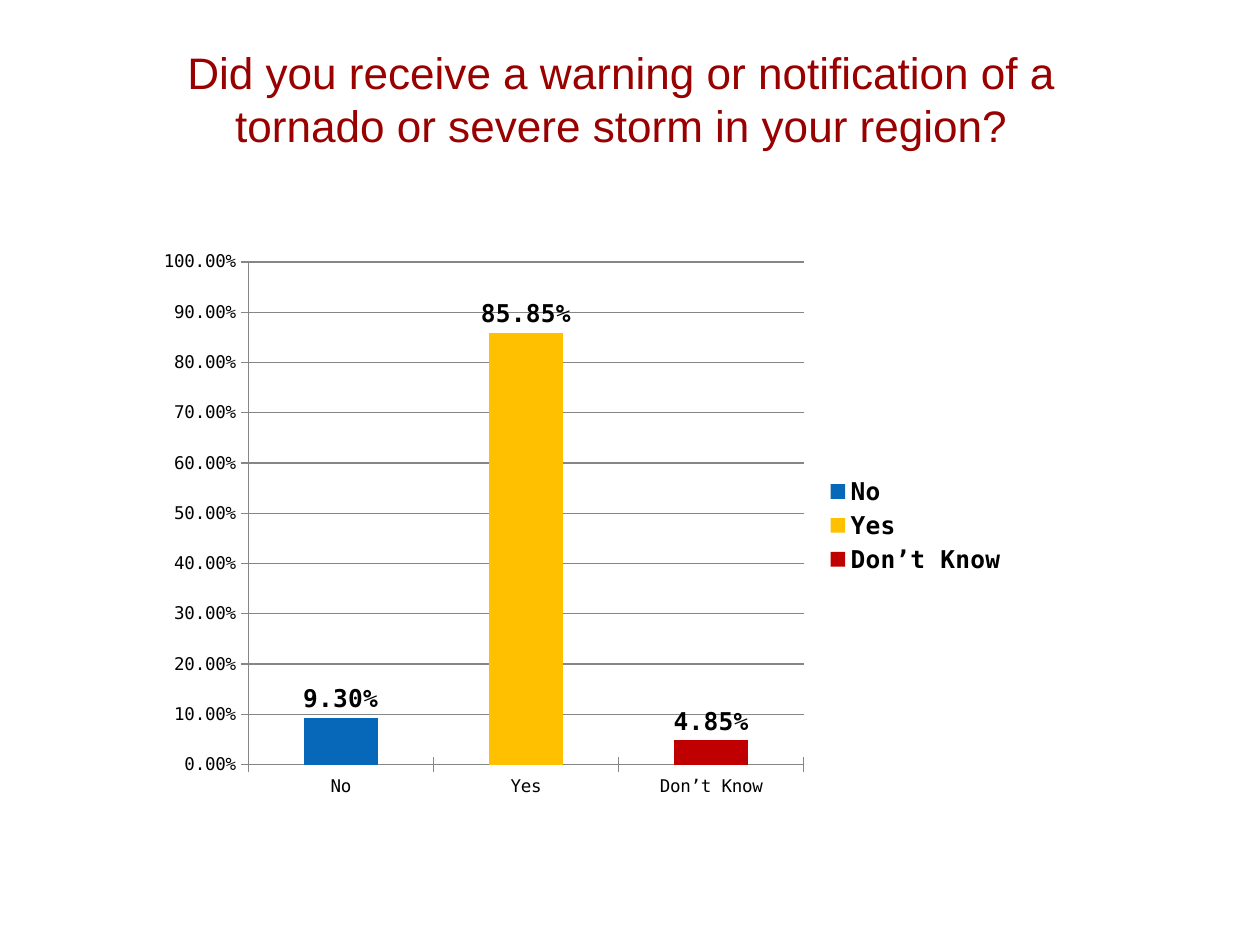
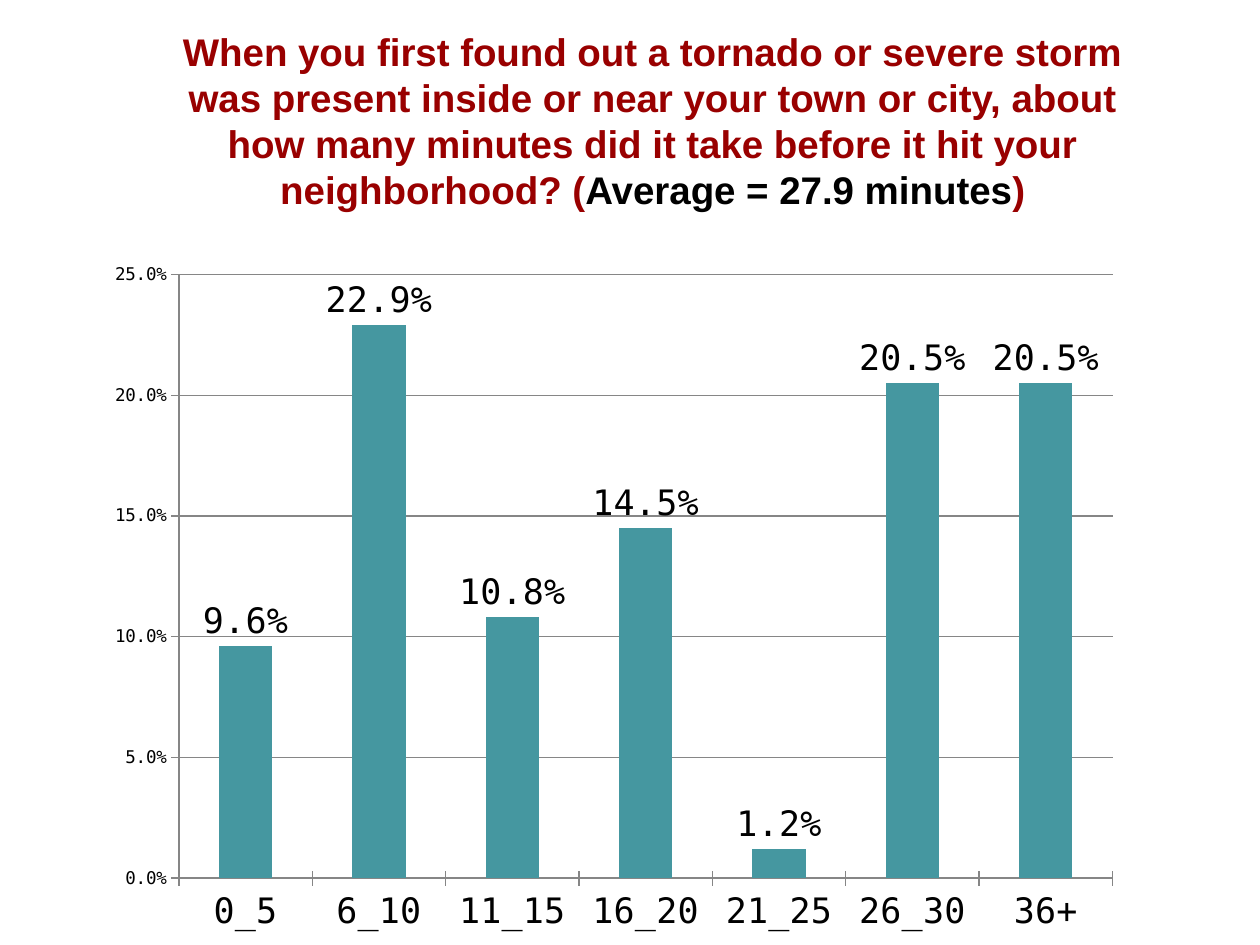
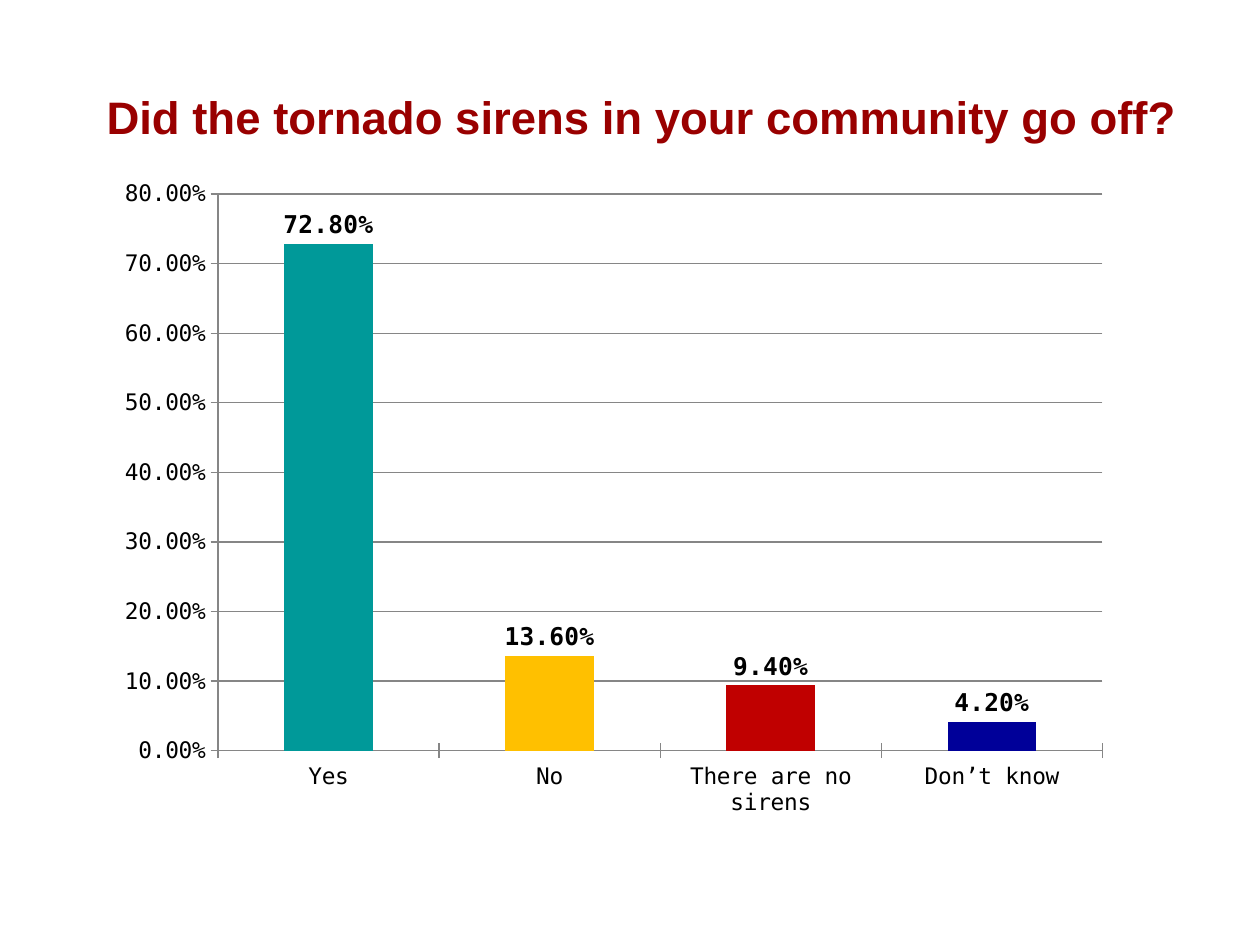
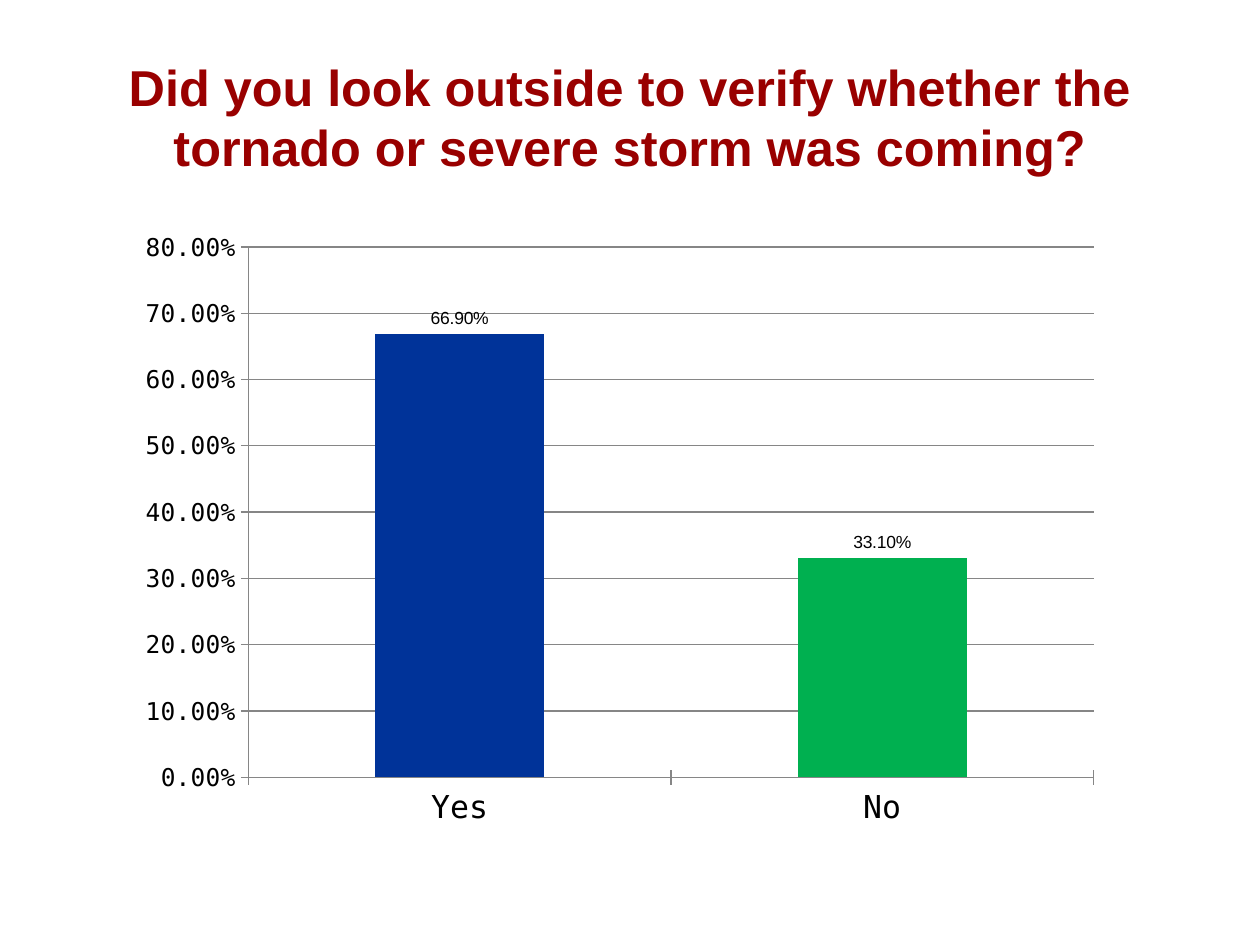
"""Build four slides of tornado warning survey results."""
from dataclasses import dataclass

from lxml import etree
from pptx import Presentation
from pptx.chart.data import CategoryChartData
from pptx.dml.color import RGBColor
from pptx.enum.chart import (XL_CHART_TYPE, XL_LABEL_POSITION,
                             XL_LEGEND_POSITION, XL_TICK_MARK)
from pptx.enum.text import MSO_ANCHOR, MSO_AUTO_SIZE, PP_ALIGN
from pptx.oxml.ns import qn
from pptx.util import Inches, Pt

COLUMN = XL_CHART_TYPE.COLUMN_CLUSTERED
OUTSIDE_END = XL_LABEL_POSITION.OUTSIDE_END
LEGEND_RIGHT = XL_LEGEND_POSITION.RIGHT
TICK_CROSS = XL_TICK_MARK.CROSS
MIDDLE = MSO_ANCHOR.MIDDLE
NO_AUTOFIT = MSO_AUTO_SIZE.NONE
CENTER = PP_ALIGN.CENTER
TITLE_ONLY = 5


@dataclass(frozen=True)
class Theme:
    title_font: str = "Arial"
    chart_font: str = "DejaVu Sans Mono"
    background: str = "FFFFFF"
    title: str = "990000"
    text: str = "000000"
    grid: str = "868686"
    white: str = "FFFFFF"
    pale: str = "BBE0E3"
    steel: str = "4597A0"
    teal: str = "009999"
    blue: str = "0768B9"
    navy: str = "000099"
    royal: str = "003399"
    yellow: str = "FFC000"
    red: str = "C00000"
    green: str = "00B050"
    small: float = 10
    axis: float = 13
    label: float = 14
    category: float = 18
    large: float = 20
    title_long: float = 22
    title_plain: float = 25.2
    title_medium: float = 26
    title_large: float = 28.8


class Deck:
    def __init__(self, theme):
        self.theme = theme
        self.prs = Presentation()
        self.prs.slide_width = Inches(10)
        self.prs.slide_height = Inches(7.5)
        self.s = None

    def font(self, font, size, name=None, color=None, bold=False):
        font.name = name or self.theme.chart_font
        font.size = Pt(size)
        font.bold = bold
        font.color.rgb = RGBColor.from_string(color or self.theme.text)

    def fill(self, fill, color):
        fill.solid()
        fill.fore_color.rgb = RGBColor.from_string(color)

    def slide(self):
        self.s = self.prs.slides.add_slide(self.prs.slide_layouts[TITLE_ONLY])
        self.fill(self.s.background.fill, self.theme.background)

    def title(self, box, parts, size, bold=True, bottom=0.05):
        sp = self.s.shapes.title
        sp.left, sp.top, sp.width, sp.height = map(Inches, box)
        tf = sp.text_frame
        tf.word_wrap = True
        tf.auto_size = NO_AUTOFIT
        tf.vertical_anchor = MIDDLE
        tf.margin_bottom = Inches(bottom)
        p = tf.paragraphs[0]
        p.alignment = CENTER
        for text, color in parts:
            r = p.add_run()
            r.text = text
            self.font(r.font, size, self.theme.title_font, color, bold)

    def place_plot(self, chart, box, plot):
        area = chart.element.chart.plotArea
        for old in area.findall(qn("c:layout")):
            area.remove(old)
        layout = etree.Element(qn("c:layout"))
        manual = etree.SubElement(layout, qn("c:manualLayout"))
        left, top, width, height = box
        x, y, w, h = plot
        settings = {"layoutTarget": "inner", "xMode": "edge", "yMode": "edge",
                    "x": (x - left) / width, "y": (y - top) / height,
                    "w": w / width, "h": h / height}
        for tag, value in settings.items():
            etree.SubElement(manual, qn(f"c:{tag}")).set("val", str(value))
        area.insert(0, layout)

    def axis(self, axis, size):
        self.font(axis.tick_labels.font, size)
        axis.major_tick_mark = TICK_CROSS
        self.line(axis.format.line)

    def line(self, line):
        line.color.rgb = RGBColor.from_string(self.theme.grid)
        line.width = Pt(0.75)

    def chart(self, box, plot, values, top, step, color, points=(),
              name="Series 1", fmt="0.00%", cat_size=None, val_size=None,
              label_size=None, label_bold=False, label_font=None,
              base_size=None, legend=False):
        small = self.theme.small
        base_size = base_size or small
        data = CategoryChartData(number_format=fmt)
        data.categories = list(values)
        data.add_series(name, list(values.values()))
        chart = self.s.shapes.add_chart(COLUMN, *map(Inches, box), data).chart
        chart.has_title = False
        self.font(chart.font, base_size)
        self.place_plot(chart, box, plot)

        self.axis(chart.category_axis, cat_size or base_size)
        axis = chart.value_axis
        self.axis(axis, val_size or base_size)
        axis.minimum_scale, axis.maximum_scale = 0, top
        axis.major_unit = step
        axis.tick_labels.number_format = fmt
        axis.tick_labels.number_format_is_linked = False
        axis.has_major_gridlines = True
        self.line(axis.major_gridlines.format.line)

        bars = chart.plots[0]
        bars.gap_width = 150
        bars.vary_by_categories = legend
        series = bars.series[0]
        series.invert_if_negative = False
        self.fill(series.format.fill, color)
        for i, point_color in enumerate(points):
            self.fill(series.points[i].format.fill, point_color)

        labels = series.data_labels
        labels.show_value = True
        labels.number_format = fmt
        labels.number_format_is_linked = False
        labels.position = OUTSIDE_END
        self.font(labels.font, label_size or small, label_font,
                  bold=label_bold)

        chart.has_legend = legend
        if legend:
            chart.legend.position = LEGEND_RIGHT
            chart.legend.include_in_layout = False
            self.font(chart.legend.font, self.theme.label, bold=True)


def main():
    t = Theme()
    deck = Deck(t)

    deck.slide()
    deck.title((0.83, 0.49, 8.2, 0.95),
               [("Did you receive a warning or notification of a tornado "
                 "or severe storm in your region?", t.title)],
               t.title_plain, bold=False, bottom=0.42)
    deck.chart((1.17, 1.92, 6.92, 4.5), (1.97, 2.08, 4.41, 3.99),
               {"No": 0.093, "Yes": 0.8585, "Don’t Know": 0.0485},
               1, 0.1, t.white, (t.blue, t.yellow, t.red), name="",
               label_size=t.label, label_bold=True, legend=True)

    deck.slide()
    deck.title((1.08, 0.33, 8.2, 1.25),
               [("When you first found out a tornado or severe storm was "
                 "present inside or near your town or city, about how many "
                 "minutes did it take before it hit your neighborhood? (",
                 t.title),
                ("Average = 27.9 minutes", t.text), (")", t.title)],
               t.title_long)
    deck.chart((0.75, 2, 8.25, 5.5), (1.42, 2.18, 7.41, 4.79),
               {"0_5": 0.096, "6_10": 0.229, "11_15": 0.108, "16_20": 0.145,
                "21_25": 0.012, "26_30": 0.205, "36+": 0.205},
               0.25, 0.05, t.steel, fmt="0.0%",
               cat_size=t.large, label_size=t.large)

    deck.slide()
    deck.title((0.42, 0.3, 9.35, 1.25),
               [("Did the tornado sirens in your community go off?", t.title)],
               t.title_medium)
    deck.chart((0.83, 1.33, 8.08, 5.25), (1.73, 1.54, 7.02, 4.42),
               {"Yes": 0.728, "No": 0.136, "There are no sirens": 0.094,
                "Don’t know": 0.042},
               0.8, 0.1, t.pale, (t.teal, t.yellow, t.red, t.navy),
               cat_size=t.axis, val_size=t.axis,
               label_size=t.label, label_bold=True)

    deck.slide()
    deck.title((0.5, 0.3, 9, 1.25),
               [("Did you look outside to verify whether the tornado or "
                 "severe storm was coming?", t.title)], t.title_large)
    deck.chart((1, 1.75, 7.83, 4.92), (1.97, 1.96, 6.71, 4.21),
               {"Yes": 0.669, "No": 0.331}, 0.8, 0.1, t.pale,
               (t.royal, t.green), base_size=t.category, val_size=t.label,
               label_font=t.title_font)

    deck.prs.save("out.pptx")


if __name__ == "__main__":
    main()
